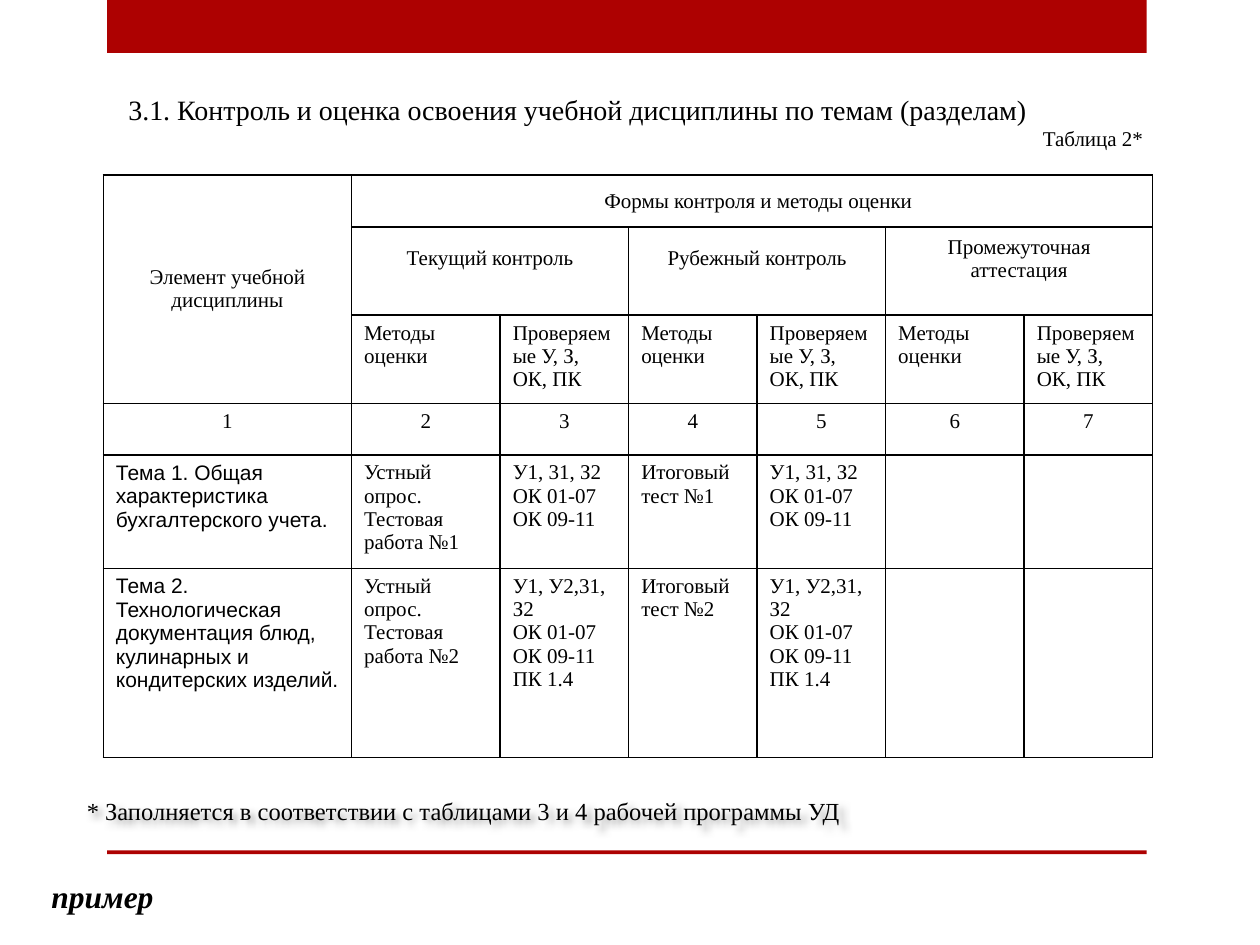
from lxml import etree
from pptx import Presentation
from pptx.dml.color import RGBColor
from pptx.enum.shapes import MSO_SHAPE
from pptx.enum.text import MSO_ANCHOR, PP_ALIGN
from pptx.oxml.ns import qn
from pptx.util import Inches, Pt

RECT = MSO_SHAPE.RECTANGLE
TOP, MID = MSO_ANCHOR.TOP, MSO_ANCHOR.MIDDLE
LEFT, MIDDLE, RIGHT, JUST = (PP_ALIGN.LEFT, PP_ALIGN.CENTER,
                             PP_ALIGN.RIGHT, PP_ALIGN.JUSTIFY)
COLORS = {"red": "AD0101", "ink": "000000", "paper": "FFFFFF"}
SERIF, SANS = "Times New Roman", "Arial"

COLS = [1.97, 1.18, 1.02, 1.02, 1.02, 1.1, 1.02]
ROWS = [0.41, 0.7, 0.7, 0.41, 0.9, 1.5]

# Header cells: row, column, row span, column span, text
HEADS = [
    (0, 0, 3, 1, "Элемент учебной дисциплины"),
    (0, 1, 1, 6, "Формы контроля и методы оценки"),
    (1, 1, 1, 2, "Текущий контроль"),
    (1, 3, 1, 2, "Рубежный контроль"),
    (1, 5, 1, 2, "Промежуточная аттестация"),
]
PAIR = ["Методы оценки", "Проверяемые У, З, ОК, ПК"]
SKILLS = [
    ["У1, 31, З2", "ОК 01-07", "ОК 09-11"],
    ["У1, У2,31, З2", "ОК 01-07", "ОК 09-11", "ПК 1.4"],
]
TOPICS = [
    "Тема 1. Общая характеристика бухгалтерского учета.",
    "Тема 2. Технологическая документация блюд, кулинарных и "
    "кондитерских изделий.",
]


def color(name):
    return RGBColor.from_string(COLORS[name])


def add_bar(slide, top, height):
    bar = slide.shapes.add_shape(RECT, Inches(0.85), Inches(top),
                                 Inches(8.25), Inches(height))
    bar.shadow.inherit = False
    bar.fill.solid()
    bar.fill.fore_color.rgb = color("red")
    bar.line.fill.background()


def write(para, text, align=LEFT, indent=0, **form):
    para.alignment = align
    if indent:
        props = para._p.get_or_add_pPr()
        props.set("marL", "0")
        props.set("indent", str(Inches(indent)))
    run = para.add_run()
    run.text = text
    for key, value in {"name": SERIF, "size": Pt(12), **form}.items():
        setattr(run.font, key, value)
    run.font.color.rgb = color("ink")


def add_text(slide, at, lines, wrap=True, anchor=TOP):
    box = slide.shapes.add_textbox(*map(Inches, at))
    frame = box.text_frame
    frame.word_wrap = wrap
    frame.vertical_anchor = anchor
    for i, line in enumerate(lines):
        para = frame.add_paragraph() if i else frame.paragraphs[0]
        write(para, **line)
    return box


def add_glow(box):
    # Soft shadow that falls from the letters of an unfilled box
    list_ = etree.SubElement(box._element.spPr, qn("a:effectLst"))
    shade = etree.SubElement(list_, qn("a:outerShdw"), blurRad="50800",
                             dist="38100", dir="2700000", algn="tl")
    tint = etree.SubElement(shade, qn("a:srgbClr"), val=COLORS["ink"])
    etree.SubElement(tint, qn("a:alpha"), val="40000")


def frame_cell(cell):
    props = cell._tc.get_or_add_tcPr()
    for side in ("lnL", "lnR", "lnT", "lnB"):
        line = etree.SubElement(props, qn("a:" + side), w=str(Pt(1)))
        fill = etree.SubElement(line, qn("a:solidFill"))
        etree.SubElement(fill, qn("a:srgbClr"), val=COLORS["ink"])
    cell.fill.solid()
    cell.fill.fore_color.rgb = color("paper")


def fill_cell(cell, lines, **form):
    for i, text in enumerate(lines):
        frame = cell.text_frame
        para = frame.add_paragraph() if i else frame.paragraphs[0]
        write(para, text, **form)


def add_grid(slide):
    table = slide.shapes.add_table(
        len(ROWS), len(COLS), Inches(0.82), Inches(1.39),
        Inches(sum(COLS)), Inches(sum(ROWS))).table
    table.first_row = table.horz_banding = False
    for col, width in zip(table.columns, COLS):
        col.width = Inches(width)
    for row, height in zip(table.rows, ROWS):
        row.height = Inches(height)
        for cell in row.cells:
            frame_cell(cell)

    # Merged headers
    for row, col, down, across, text in HEADS:
        cell = table.cell(row, col)
        cell.merge(table.cell(row + down - 1, col + across - 1))
        cell.vertical_anchor = MID
        if row == 1:
            cell.margin_bottom = Inches(0.24)
        fill_cell(cell, [text], align=MIDDLE,
                  indent=0.1 if across == 6 else 0)

    # Column heads and numbers
    for col, text in enumerate(PAIR * 3, 1):
        fill_cell(table.cell(2, col), [text])
    for col in range(len(COLS)):
        fill_cell(table.cell(3, col), [str(col + 1)], align=MIDDLE)

    # Topics
    for num, (topic, skills) in enumerate(zip(TOPICS, SKILLS), 1):
        row = num + 3
        fill_cell(table.cell(row, 0), [topic], name=SANS)
        parts = [["Устный опрос.", f"Тестовая работа №{num}"], skills,
                 [f"Итоговый тест №{num}"], skills]
        for col, lines in enumerate(parts, 1):
            fill_cell(table.cell(row, col), lines)


def main():
    deck = Presentation()
    deck.slide_width, deck.slide_height = Inches(10), Inches(7.5)
    slide = deck.slides.add_slide(deck.slide_layouts[6])

    # Red bands
    add_bar(slide, 0, 0.42)
    add_bar(slide, 6.75, 0.03)

    # Label and title
    add_text(slide, (0.31, 6.91, 1.02, 0.4),
             [dict(text="пример", size=Pt(18), bold=True, italic=True)],
             wrap=False)
    add_text(slide, (0.82, 0.68, 8.35, 0.57), [
        dict(text="3.1. Контроль и оценка освоения учебной дисциплины "
                  "по темам (разделам)", indent=0.1, size=Pt(16)),
        dict(text="Таблица 2*", align=RIGHT, indent=0.1),
    ], anchor=MID)

    add_grid(slide)

    # Footnote
    note = add_text(slide, (0.59, 6.27, 8.58, 0.39), [
        dict(text="* Заполняется в соответствии с таблицами 3 и 4 "
                  "рабочей программы УД", align=JUST, size=Pt(14))])
    add_glow(note)
    deck.save("out.pptx")


if __name__ == "__main__":
    main()
